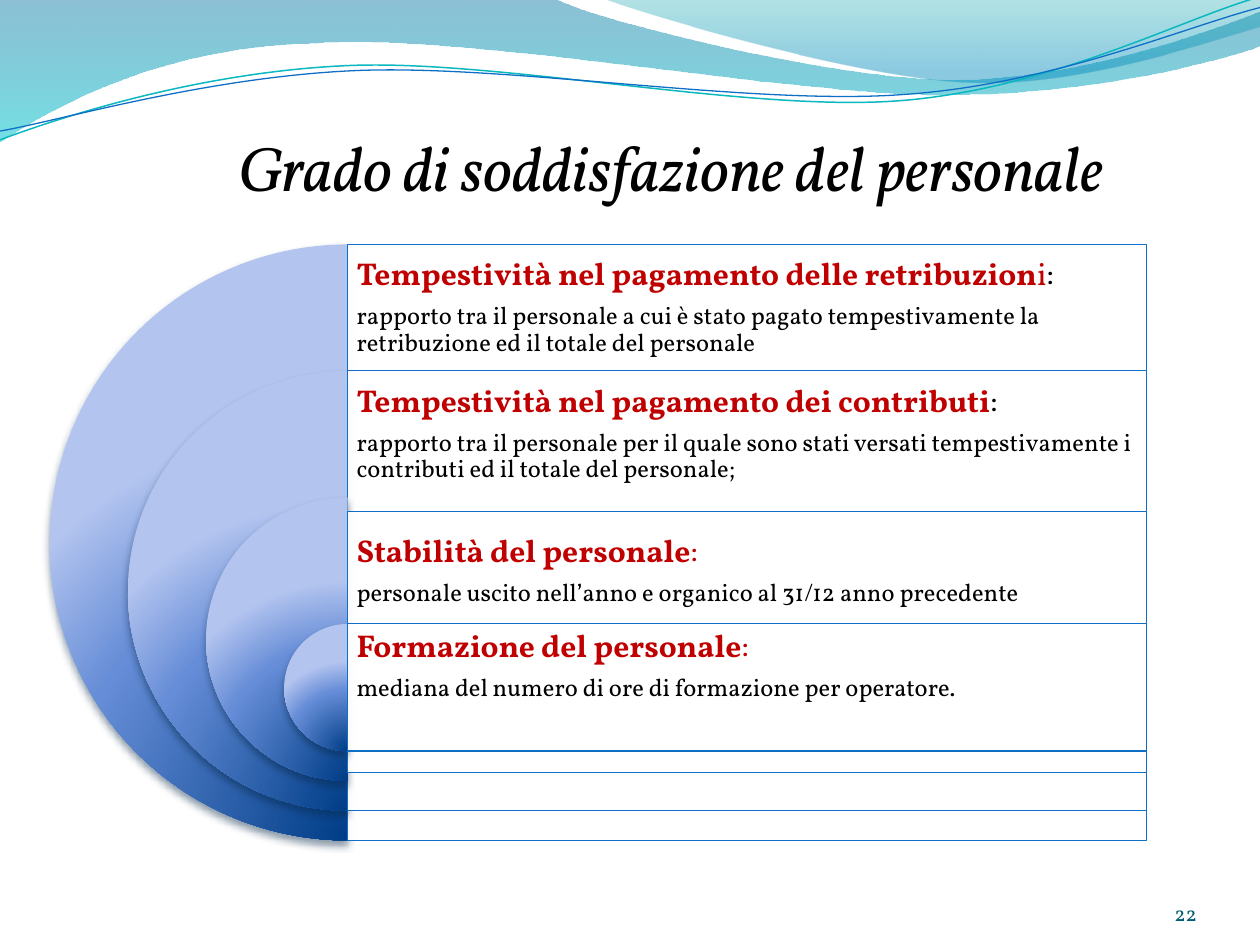
from math import cos, radians, sin

from lxml import etree
from pptx import Presentation
from pptx.dml.color import RGBColor
from pptx.enum.shapes import MSO_SHAPE as Shape
from pptx.enum.text import MSO_ANCHOR as Anchor, PP_ALIGN as Align
from pptx.oxml import parse_xml
from pptx.oxml.ns import nsdecls, qn
from pptx.util import Inches, Pt

BLACK = RGBColor(0x00, 0x00, 0x00)
WHITE = RGBColor(0xFF, 0xFF, 0xFF)
RED = RGBColor(0xC0, 0x00, 0x00)
BLUE = RGBColor(0x0F, 0x6F, 0xC6)
AQUA = RGBColor(0x0A, 0xB8, 0xBF)
TEAL = RGBColor(0x04, 0x5D, 0x75)
SHADOW = RGBColor(0x04, 0x27, 0x47)
DEEP_SEA = RGBColor(0x00, 0x74, 0xA1)
TURQUOISE = RGBColor(0x00, 0xC6, 0xCF)
LAGOON = RGBColor(0x00, 0xA1, 0xA9)
SKY = RGBColor(0x00, 0x8B, 0xBF)
NAVY = RGBColor(0x00, 0x3D, 0x87)
CORNFLOWER = RGBColor(0x66, 0x8D, 0xD7)
LAVENDER = RGBColor(0xB3, 0xC4, 0xEF)

DOWNWARD = '<a:lin ang="5400000" scaled="0"/>'
FROM_BELOW = ('<a:path path="circle"><a:fillToRect l="50000" t="130000" '
              'r="50000" b="-30000"/></a:path>')
PIE_STOPS = [(0, NAVY, 100), (68, CORNFLOWER, 100), (100, LAVENDER, 100)]

# Outlines: a pair is a straight step, a sextet is a Bezier curve.
BAND = [(0, 0), (4.4, -0.01), (4.76, 0.17, 6.64, 0.63, 7.58, 0.63),
        (8.53, 0.63, 9.58, 0.26, 10, 0.09), (10.01, 0.36),
        (9.83, 0.44, 8.7, 0.76, 7.46, 0.75),
        (6.22, 0.75, 3.82, 0.28, 2.57, 0.34),
        (1.29, 0.36, 0.46, 0.83, -0.01, 1.13), (0, 0)]
CREST = [(4.79, -0.01), (5.09, 0.11, 6.82, 0.62, 7.69, 0.65),
         (8.56, 0.69, 9.61, 0.32, 10, 0.21), (10, 0), (4.79, -0.01)]
AQUA_WAVE = [(0, 1.11), (0.48, 0.93, 1.58, 0.57, 2.77, 0.52),
             (3.95, 0.47, 5.93, 0.89, 7.13, 0.8),
             (8.33, 0.71, 9.38, 0.15, 9.98, -0.02)]
BLUE_WAVE = [(0, 1.04), (0.47, 0.96, 1.64, 0.61, 2.83, 0.56),
             (4.03, 0.51, 5.97, 0.84, 7.17, 0.75),
             (8.36, 0.67, 9.41, 0.21, 10, 0.06)]
WAVE_TILT = -2.7
WAVE_CENTER = (4.99, 0.58)

# Panel top, panel height, text height, bottom inset, heading spans, description
ROWS = [
    (1.94, 4.73, 1.01, 0.08,
     [("Tempestività nel pagamento delle retribuzion", RED, True),
      ("i", RED, False), (":", BLACK, False)],
     "rapporto tra il personale a cui è stato pagato tempestivamente la "
     "retribuzione ed il totale del personale"),
    (2.94, 3.49, 1.01, 0.07,
     [("Tempestività nel pagamento dei contributi", RED, True),
      (":", BLACK, False)],
     "rapporto tra il personale per il quale sono stati versati "
     "tempestivamente i contributi ed il totale del personale;"),
    (4.06, 2.07, 0.93, 0.06,
     [("Stabilità del personale", RED, True), (":", RED, False)],
     "personale uscito nell’anno e organico al 31/12 anno precedente"),
    (4.95, 1.01, 1.01, 0.41,
     [("Formazione del personale", RED, True), (":", RED, False)],
     "mediana del numero di ore di formazione per operatore."),
]
PANEL_LEFT, PANEL_WIDTH = 2.76, 6.34


def turned(part, angle, center):
    """Turn every point of an outline part clockwise about the center."""
    across, down = cos(radians(angle)), sin(radians(angle))
    result = []
    for x, y in zip(part[::2], part[1::2]):
        x, y = x - center[0], y - center[1]
        result += [center[0] + x * across - y * down,
                   center[1] + x * down + y * across]
    return result


class SlideBuilder:
    font = "Vollkorn"

    def __init__(self, page):
        self.page = page

    def gradient(self, shape, stops, direction):
        """Fill with (position, colour, opacity) stops, all in percent."""
        marks = "".join(
            f'<a:gs pos="{place * 1000}"><a:srgbClr val="{color}">'
            f'<a:alpha val="{opacity * 1000}"/></a:srgbClr></a:gs>'
            for place, color, opacity in stops)
        shape.fill.background()
        properties = shape._element.spPr
        properties.replace(properties.find(qn("a:noFill")), parse_xml(
            f'<a:gradFill {nsdecls("a")} rotWithShape="1"><a:gsLst>{marks}</a:gsLst>'
            f'{direction}</a:gradFill>'))

    def outline(self, parts, closed):
        """Draw all points as a freeform, then join each curve's three steps."""
        points = [(Inches(x), Inches(y)) for part in parts
                  for x, y in zip(part[::2], part[1::2])]
        builder = self.page.shapes.build_freeform(*points[0])
        builder.add_line_segments(points[1:], close=closed)
        shape = builder.convert_to_shape()
        shape.shadow.inherit = False
        steps = iter(list(shape._element.spPr.iter(qn("a:lnTo"))))
        for part in parts[1:]:
            step = next(steps)
            if len(part) == 6:
                step.addprevious(curve := etree.Element(qn("a:cubicBezTo")))
                for control in (step, next(steps), next(steps)):
                    curve.append(control[0])
                    control.getparent().remove(control)
        return shape

    def area(self, outline, stops):
        shape = self.outline(outline, True)
        shape.line.fill.background()
        self.gradient(shape, stops, DOWNWARD)

    def wave(self, outline, color, width):
        level = [turned(part, -WAVE_TILT, WAVE_CENTER) for part in outline]
        shape = self.outline(level, False)
        shape.rotation = WAVE_TILT
        shape.fill.background()
        shape.line.color.rgb = color
        shape.line.width = Pt(width)

    def preset(self, kind, left, top, width, height):
        shape = self.page.shapes.add_shape(
            kind, Inches(left), Inches(top), Inches(width), Inches(height))
        shape.shadow.inherit = False
        return shape

    def half_disc(self, center, top, size):
        shape = self.preset(Shape.PIE, center - size / 2, top, size, size)
        shape.adjustments[0], shape.adjustments[1] = 54, 162
        shape.line.fill.background()
        self.gradient(shape, PIE_STOPS, FROM_BELOW)
        shape._element.spPr.find(qn("a:effectLst")).append(parse_xml(
            f'<a:outerShdw {nsdecls("a")} blurRad="{Pt(4.5)}" dist="{Pt(3)}" '
            f'dir="5400000" rotWithShape="0"><a:srgbClr val="{SHADOW}">'
            f'<a:alpha val="48000"/></a:srgbClr></a:outerShdw>'))

    def panel(self, left, top, width, height):
        shape = self.preset(Shape.RECTANGLE, left, top, width, height)
        shape.fill.solid()
        shape.fill.fore_color.rgb = WHITE
        color = shape._element.spPr.find(qn("a:solidFill"))[0]
        etree.SubElement(color, qn("a:alpha")).set("val", "90000")
        shape.line.color.rgb = BLUE
        shape.line.width = Pt(0.75)

    def text(self, place, insets, anchor, align, lines, spaced=False):
        """Add a text box; each line is (size, italic, [(text, colour, bold)])."""
        box = self.page.shapes.add_textbox(*map(Inches, place))
        frame = box.text_frame
        frame.word_wrap = True
        frame.vertical_anchor = anchor
        (frame.margin_left, frame.margin_top,
         frame.margin_right, frame.margin_bottom) = map(Inches, insets)
        for index, (size, italic, spans) in enumerate(lines):
            para = frame.add_paragraph() if index else frame.paragraphs[0]
            para.alignment = align
            if spaced:
                para.line_spacing = 0.9
                para.space_after = Pt(0.35 * size)
            for words, color, bold in spans:
                span = para.add_run()
                span.text = words
                span.font.name = self.font
                span.font.size = Pt(size)
                span.font.bold = bold
                span.font.italic = italic
                span.font.color.rgb = color


def main():
    deck = Presentation()
    deck.slide_width, deck.slide_height = Inches(10), Inches(7.5)
    builder = SlideBuilder(deck.slides.add_slide(deck.slide_layouts[6]))

    builder.area(BAND, [(0, DEEP_SEA, 45), (100, TURQUOISE, 55)])
    builder.area(CREST, [(0, LAGOON, 30), (80, SKY, 45)])
    builder.wave(AQUA_WAVE, AQUA, 0.85)
    builder.wave(BLUE_WAVE, BLUE, 0.75)
    builder.text((1.4, 0.44, 7.85, 1.18), (0, 0.05, 0, 0), Anchor.BOTTOM, Align.CENTER,
                 [(36, True, [("Grado di soddisfazione del personale", BLACK, False)])])
    for index, (top, height, text_height, bottom, heading, description) in enumerate(ROWS):
        size = 4.73 - 1.24 * index
        builder.half_disc(PANEL_LEFT, ROWS[0][0] + 1.004 * index, size)
        builder.panel(PANEL_LEFT, top, PANEL_WIDTH, height)
        builder.text((PANEL_LEFT, top, PANEL_WIDTH, text_height),
                     (0.07, 0.07, 0.07, bottom), Anchor.MIDDLE, Align.LEFT,
                     [(18, False, heading), (14, False, [(description, BLACK, False)])],
                     spaced=True)
    builder.text((8.67, 6.95, 0.83, 0.4), (0, 0, 0, 0), Anchor.BOTTOM, Align.RIGHT,
                 [(12, False, [("22", TEAL, False)])])
    deck.save("out.pptx")


if __name__ == "__main__":
    main()
